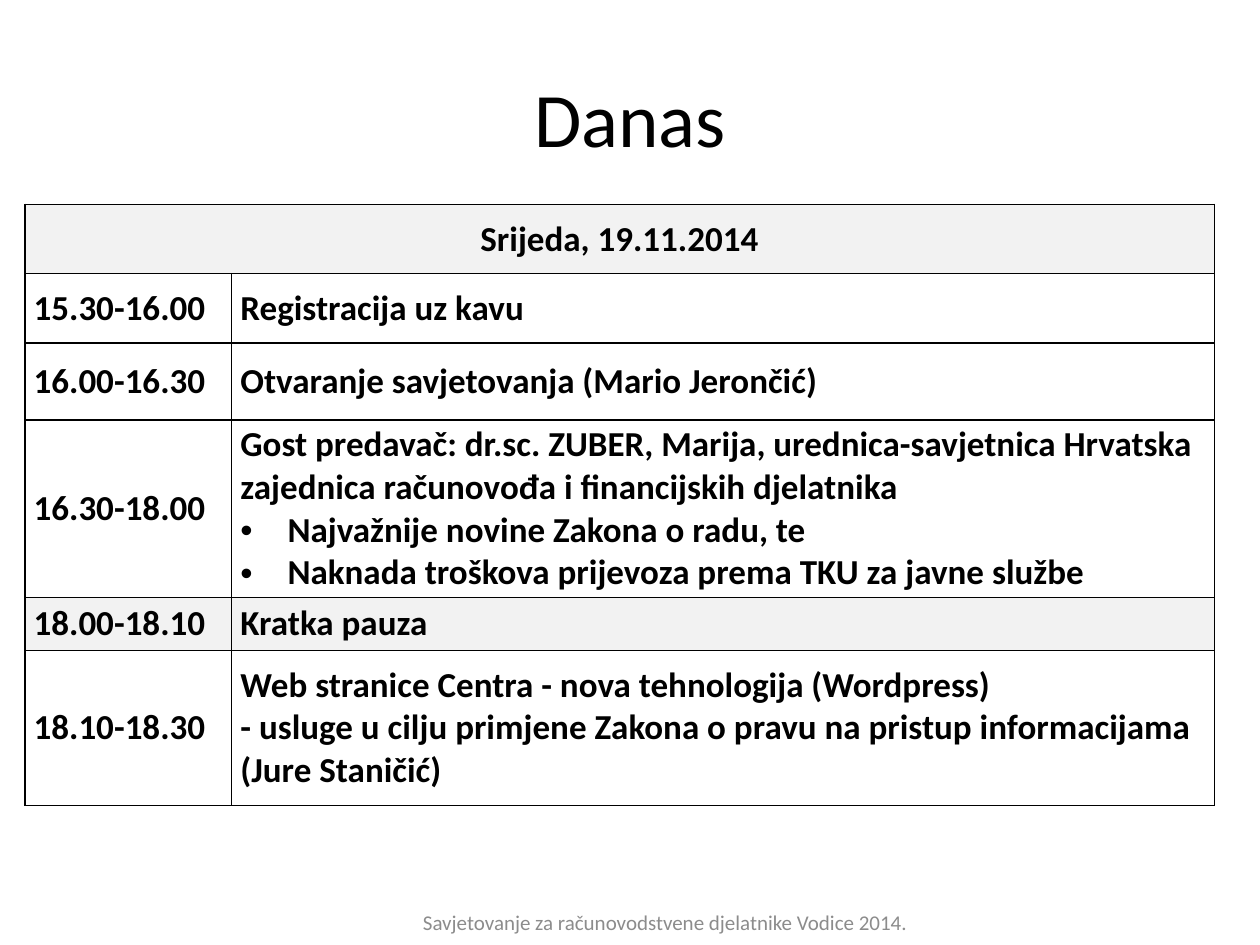
from lxml.etree import SubElement
from pptx import Presentation
from pptx.dml.color import RGBColor
from pptx.enum.text import MSO_ANCHOR as Anchor, PP_ALIGN as Align
from pptx.oxml.ns import qn
from pptx.util import Cm, Pt

BLACK = RGBColor(0x00, 0x00, 0x00)
GREY = RGBColor(0x8C, 0x8C, 0x8C)
SHADE = RGBColor(0xF2, 0xF2, 0xF2)
FONT = "Calibri"
BULLET = "• "

DAY = "Srijeda, 19.11.2014"
SESSIONS = [
    ("15.30-16.00", ["Registracija uz kavu"]),
    ("16.00-16.30", ["Otvaranje savjetovanja (Mario Jerončić)"]),
    ("16.30-18.00", [
        "Gost predavač: dr.sc. ZUBER, Marija, urednica-savjetnica Hrvatska "
        "zajednica računovođa i financijskih djelatnika",
        BULLET + "Najvažnije novine Zakona o radu, te",
        BULLET + "Naknada troškova prijevoza prema TKU za javne službe",
    ]),
    ("18.00-18.10", ["Kratka pauza"]),
    ("18.10-18.30", [
        "Web stranice Centra - nova tehnologija (Wordpress)",
        "- usluge u cilju primjene Zakona o pravu na pristup informacijama",
        "(Jure Staničić)",
    ]),
]
BREAK_ROW = 4
COLUMN_SHARES = [1.64, 7.8]
ROW_SHARES = [0.55, 0.55, 0.61, 1.41, 0.42, 1.23]


def style_runs(paragraph, size, color, bold=False):
    for run in paragraph.runs:
        run.font.name = FONT
        run.font.size = Pt(size)
        run.font.bold = bold
        run.font.color.rgb = color


def add_bullet(paragraph):
    properties = paragraph._p.get_or_add_pPr()
    properties.set("marL", str(Cm(0.95)))
    properties.set("indent", str(-Cm(0.95)))
    SubElement(properties, qn("a:buFont"), typeface="Arial")
    SubElement(properties, qn("a:buChar"), char=BULLET.strip())


def add_borders(cell):
    properties = cell._tc.get_or_add_tcPr()
    for side in ("a:lnL", "a:lnR", "a:lnT", "a:lnB"):
        line = SubElement(properties, qn(side), w=str(Pt(1)))
        fill = SubElement(line, qn("a:solidFill"))
        SubElement(fill, qn("a:srgbClr"), val=str(BLACK))


def fill_cell(cell, lines, shaded, align=Align.LEFT):
    cell.vertical_anchor = Anchor.MIDDLE
    cell.margin_left = cell.margin_right = Cm(0.18)
    cell.margin_top = cell.margin_bottom = 0
    add_borders(cell)
    if shaded:
        cell.fill.solid()
        cell.fill.fore_color.rgb = SHADE
    else:
        cell.fill.background()
    frame = cell.text_frame
    frame.text = "\n".join(line.removeprefix(BULLET) for line in lines)
    for paragraph, line in zip(frame.paragraphs, lines):
        paragraph.alignment = align
        if line.startswith(BULLET):
            add_bullet(paragraph)
        style_runs(paragraph, 20, BLACK, bold=True)


def place_title(slide, left, top, width, height):
    title = slide.shapes.title
    title.left, title.top, title.width, title.height = left, top, width, height
    frame = title.text_frame
    frame.text = "Danas"
    frame.vertical_anchor = Anchor.MIDDLE
    frame.paragraphs[0].alignment = Align.CENTER
    style_runs(frame.paragraphs[0], 44, BLACK)


def place_schedule(slide, left, top, width, height):
    schedule = slide.shapes.add_table(
        len(SESSIONS) + 1, 2, left, top, width, height).table
    schedule.first_row = schedule.horz_banding = False
    for column, share in zip(schedule.columns, COLUMN_SHARES):
        column.width = int(width * share / sum(COLUMN_SHARES))
    for row, share in zip(schedule.rows, ROW_SHARES):
        row.height = int(height * share / sum(ROW_SHARES))

    day_cell, day_end = schedule.cell(0, 0), schedule.cell(0, 1)
    day_cell.merge(day_end)
    fill_cell(day_cell, [DAY], True, Align.CENTER)
    add_borders(day_end)
    for row, (time, topics) in enumerate(SESSIONS, start=1):
        shaded = row == BREAK_ROW
        fill_cell(schedule.cell(row, 0), [time], shaded)
        fill_cell(schedule.cell(row, 1), topics, shaded)


def place_footer(slide, left, top, width, height):
    frame = slide.shapes.add_textbox(left, top, width, height).text_frame
    frame.word_wrap = True
    frame.vertical_anchor = Anchor.MIDDLE
    frame.text = "Savjetovanje za računovodstvene djelatnike Vodice 2014."
    frame.paragraphs[0].alignment = Align.CENTER
    style_runs(frame.paragraphs[0], 12, GREY)


def main():
    deck = Presentation()
    deck.slide_width, deck.slide_height = Cm(25.4), Cm(19.05)
    slide = deck.slides.add_slide(deck.slide_layouts[5])
    place_footer(slide, Cm(7.72), Cm(18.08), Cm(11.38), Cm(1.02))
    place_title(slide, Cm(1.27), Cm(0.76), Cm(22.86), Cm(3.18))
    place_schedule(slide, Cm(0.5), Cm(4.12), Cm(23.98), Cm(12.12))
    deck.save("out.pptx")


if __name__ == "__main__":
    main()
